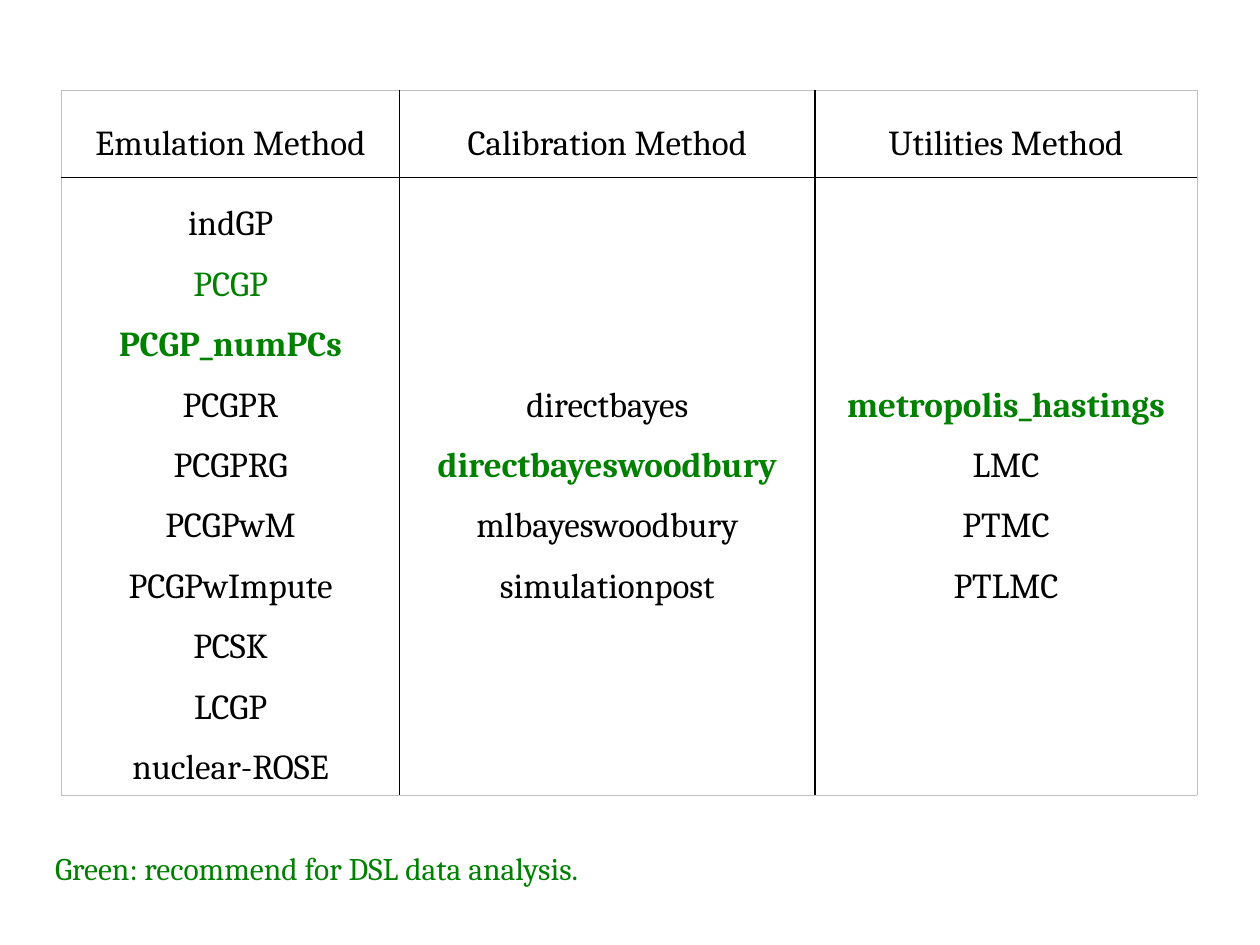
import pptx
import pptx.dml.color
import pptx.enum.text
import pptx.oxml.ns
import pptx.util
from lxml import etree
from pptx.util import Inches

FONT = "Cambria"
BLACK, GREEN, GRAY = "000000", "008000", "BFBFBF"
METHODS = {
    "Emulation Method": [
        "indGP", "PCGP", "PCGP_numPCs", "PCGPR", "PCGPRG", "PCGPwM",
        "PCGPwImpute", "PCSK", "LCGP", "nuclear-ROSE",
    ],
    "Calibration Method": [
        "directbayes", "directbayeswoodbury", "mlbayeswoodbury", "simulationpost",
    ],
    "Utilities Method": ["metropolis_hastings", "LMC", "PTMC", "PTLMC"],
}
BEST = {"PCGP_numPCs", "directbayeswoodbury", "metropolis_hastings"}
RECOMMENDED = BEST | {"PCGP"}
COLUMN_WIDTHS = [2.68, 3.3, 3.03]
ROW_HEIGHTS = [0.69, 4.9]


def color(value):
    return pptx.dml.color.RGBColor.from_string(value)


def set_values(target, values):
    for name, value in values.items():
        setattr(target, name, value)


def add_span(para, text, size, shade, bold=False):
    span = para.add_run()
    span.text = text
    set_values(span.font, {"name": FONT, "size": pptx.util.Pt(size), "bold": bold})
    span.font.color.rgb = color(shade)


def add_border(cell, side, shade, width):
    properties = cell._tc.get_or_add_tcPr()
    line = etree.SubElement(properties, pptx.oxml.ns.qn(f"a:ln{side}"))
    line.set("w", str(pptx.util.Pt(width)))
    fill = etree.SubElement(line, pptx.oxml.ns.qn("a:solidFill"))
    etree.SubElement(fill, pptx.oxml.ns.qn("a:srgbClr")).set("val", shade)


def style_cell(cell, row, column):
    outer = {
        "L": column == 0,
        "R": column == len(COLUMN_WIDTHS) - 1,
        "T": row == 0,
        "B": row == len(ROW_HEIGHTS) - 1,
    }
    for side, is_outer in outer.items():
        add_border(cell, side, *((GRAY, 0.5) if is_outer else (BLACK, 1)))
    cell.fill.background()
    cell.vertical_anchor = pptx.enum.text.MSO_ANCHOR.MIDDLE


def fill_cell(cell, lines):
    frame = cell.text_frame
    for index, text in enumerate(lines):
        para = frame.add_paragraph() if index else frame.paragraphs[0]
        set_values(para, {
            "alignment": pptx.enum.text.PP_ALIGN.CENTER,
            "line_spacing": 1.5,
        })
        shade = GREEN if text in RECOMMENDED else BLACK
        add_span(para, text, 20, shade, text in BEST)


def add_method_table(page):
    table = page.shapes.add_table(
        len(ROW_HEIGHTS), len(COLUMN_WIDTHS), Inches(0.49), Inches(0.72),
        Inches(sum(COLUMN_WIDTHS)), Inches(sum(ROW_HEIGHTS)),
    ).table
    set_values(table, {"first_row": False, "horz_banding": False})
    for row, height in zip(table.rows, ROW_HEIGHTS):
        row.height = Inches(height)
    for index, (heading, names) in enumerate(METHODS.items()):
        table.columns[index].width = Inches(COLUMN_WIDTHS[index])
        for row, lines in enumerate([[heading], names]):
            cell = table.cell(row, index)
            style_cell(cell, row, index)
            fill_cell(cell, lines)


def add_note(page, text):
    box = page.shapes.add_textbox(
        Inches(0.34), Inches(6.69), Inches(4.66), Inches(0.4)
    )
    set_values(box.text_frame, {
        "word_wrap": False,
        "auto_size": pptx.enum.text.MSO_AUTO_SIZE.SHAPE_TO_FIT_TEXT,
    })
    add_span(box.text_frame.paragraphs[0], text, 18, GREEN)


def main():
    deck = pptx.Presentation()
    set_values(deck, {"slide_width": Inches(10), "slide_height": Inches(7.5)})
    page = deck.slides.add_slide(deck.slide_layouts[6])
    add_method_table(page)
    add_note(page, "Green: recommend for DSL data analysis.")
    deck.save("out.pptx")


if __name__ == "__main__":
    main()
